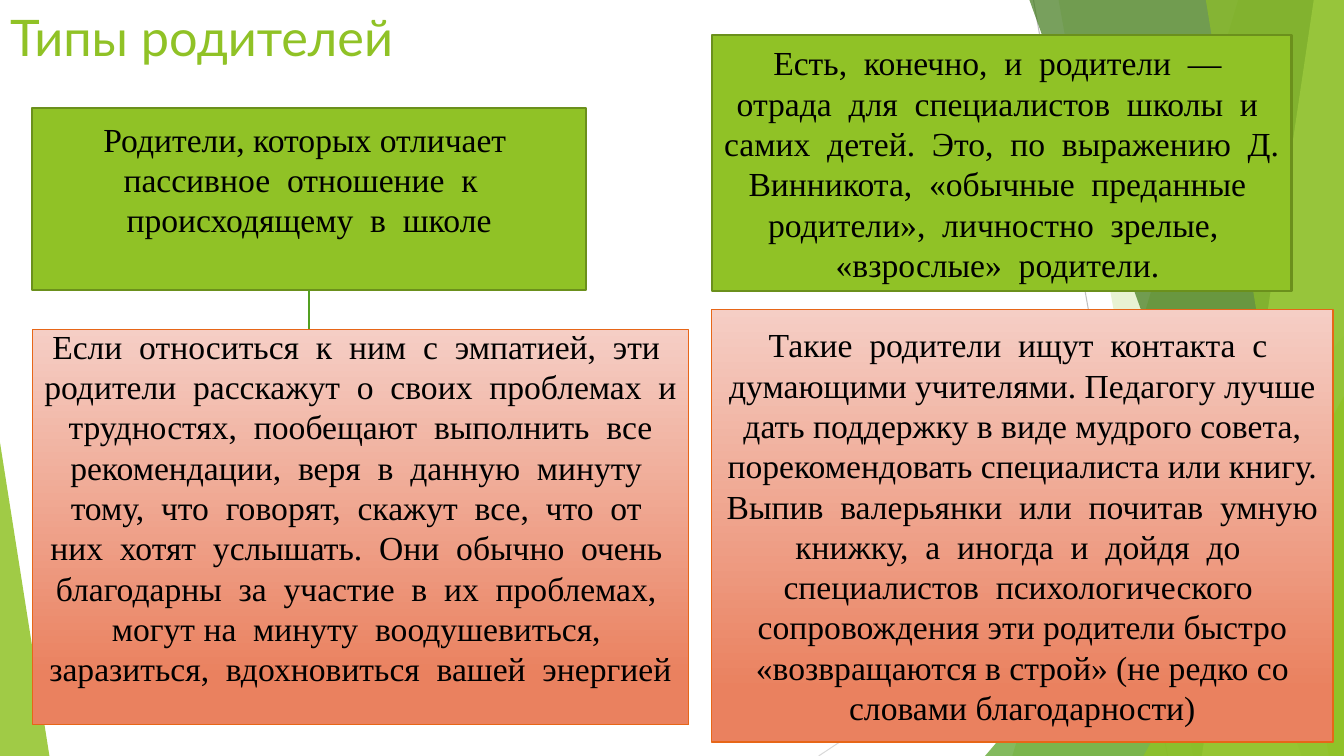
"""Builds the slide about types of parents: two headings above two advice panels."""
import pptx
import pptx.dml.color
import pptx.enum.shapes
import pptx.enum.text
import pptx.oxml
import pptx.oxml.ns
import pptx.util
from pptx.util import Inches

COLORS = {
    "green": "90C226", "green_edge": "6B901C", "leaf": "54A021", "forest": "3F7819",
    "lime": "C0E474", "gray": "BFBFBF", "light_gray": "D9D9D9", "black": "000000",
    "peach": "F5CEC5", "coral": "EA815F", "orange": "E76618",
}
WIDTH, HEIGHT = 13.33, 7.5


def rgb(name):
    return pptx.dml.color.RGBColor.from_string(COLORS[name])


def add_line(start, end, color, width):
    connector = slide.shapes.add_connector(
        pptx.enum.shapes.MSO_CONNECTOR.STRAIGHT, *[Inches(value) for value in start + end])
    connector.line.color.rgb = rgb(color)
    connector.line.width = pptx.util.Pt(width)
    pptx.oxml.ns.qn("a:effectLst")
    connector._element.spPr.append(pptx.oxml.parse_xml(
        f"<a:effectLst {pptx.oxml.ns.nsdecls('a')}/>"))
    return connector


presentation = pptx.Presentation()
presentation.slide_width = Inches(WIDTH)
presentation.slide_height = Inches(HEIGHT)
slide = presentation.slides.add_slide(presentation.slide_layouts[5])

add_line((10.25, 0), (11.58, HEIGHT), "gray", 0.75)
add_line((WIDTH, 4.03), (8.12, HEIGHT), "light_gray", 0.75)

# kind, geometry, colour, opacity
decorations = [
    ("band", (12.28, 10.04), "green", 30),
    ("band", (10.5, 11.83), "green", 20),
    ("triangle", (9.77, 3.33, 3.56, 1), "leaf", 72),
    ("band", (10.21, 12.91), "forest", 70),
    ("band", (13.03, 11.92), "lime", 70),
    ("band", (11.96, 13.18), "green", 65),
    ("triangle", (11.34, 3.93, 1.99, 1), "green", 80),
    ("triangle", (0, 4.39, 0.49, 0), "green", 85),
]
for kind, geometry, color, opacity in decorations:
    if kind == "band":
        top_x, bottom_x = geometry
        builder = slide.shapes.build_freeform(Inches(top_x), 0)
        builder.add_line_segments([(Inches(x), Inches(y)) for x, y in (
            (WIDTH, 0), (WIDTH, HEIGHT), (bottom_x, HEIGHT))], close=True)
        shape = builder.convert_to_shape()
    else:
        left, top, width, apex = geometry
        shape = slide.shapes.add_shape(
            pptx.enum.shapes.MSO_SHAPE.ISOSCELES_TRIANGLE,
            Inches(left), Inches(top), Inches(width), Inches(HEIGHT - top))
        shape.adjustments[0] = apex
    shape.shadow.inherit = False
    shape.line.fill.background()
    shape.fill.solid()
    shape.fill.fore_color.rgb = rgb(color)
    color_element = shape._element.spPr.find(".//" + pptx.oxml.ns.qn("a:srgbClr"))
    color_element.append(pptx.oxml.parse_xml(
        f"<a:alpha {pptx.oxml.ns.nsdecls('a')} val='{opacity * 1000}'/>"))

title = slide.shapes.title
title.left, title.top, title.width, title.height = 0, 0, Inches(4.29), Inches(0.72)
title.text_frame.vertical_anchor = pptx.enum.text.MSO_ANCHOR.MIDDLE
paragraph = title.text_frame.paragraphs[0]
paragraph.alignment = pptx.enum.text.PP_ALIGN.LEFT
run = paragraph.add_run()
run.text = "Типы родителей"
run.font.name = "Lato"
run.font.size = pptx.util.Pt(36)
run.font.color.rgb = rgb("green")

# style, left, top, width, height, bottom margin, paragraphs
boxes = [
    ("heading", 0.32, 1.07, 5.49, 1.81, 0.45, [
        "Родители, которых отличает  пассивное  отношение  к  ",
        "происходящему  в  школе"]),
    ("heading", 7.06, 0.35, 5.75, 2.54, 0.05, [
        "Есть,  конечно,  и  родители  —  отрада  для  специалистов  школы  и  самих  детей.  "
        "Это,  по  выражению  Д.  Винникота,  «обычные  преданные  ",
        "родители»,  личностно  зрелые,  ",
        "«взрослые»  родители. "]),
    ("advice", 0.32, 3.27, 6.51, 3.92, 0.45, [
        "Если  относиться  к  ним  с  эмпатией,  эти  родители  расскажут  о  своих  проблемах  "
        "и  трудностях,  пообещают  выполнить  все  рекомендации,  веря  в  данную  минуту  "
        "тому,  что  говорят,  скажут  все,  что  от  них  хотят  услышать.  Они  обычно  очень  "
        "благодарны  за  участие  в  их  проблемах,  могут на  минуту  воодушевиться,  "
        "заразиться,  вдохновиться  вашей  энергией"]),
    ("advice", 7.06, 3.07, 6.16, 4.29, 0.05, [
        "Такие  родители  ищут  контакта  с  думающими учителями. Педагогу лучше дать поддержку "
        "в виде мудрого совета, порекомендовать специалиста или книгу. Выпив  валерьянки  или  "
        "почитав  умную книжку,  а  иногда  и  дойдя  до  специалистов  психологического  "
        "сопровождения эти родители быстро «возвращаются в строй» (не редко со словами "
        "благодарности)"]),
]
for index, (style, left, top, width, height, bottom_margin, texts) in enumerate(boxes):
    box = slide.shapes.add_shape(
        pptx.enum.shapes.MSO_SHAPE.RECTANGLE,
        Inches(left), Inches(top), Inches(width), Inches(height))
    box.shadow.inherit = False
    if style == "heading":
        box.fill.solid()
        box.fill.fore_color.rgb = rgb("green")
        box.line.color.rgb = rgb("green_edge")
        box.line.width = pptx.util.Pt(1.5)
    else:
        box.fill.gradient()
        box.fill.gradient_angle = 270
        for stop, color, position in zip(
                box.fill.gradient_stops, ("peach", "coral"), (0, 0.88)):
            stop.color.rgb = rgb(color)
            stop.position = position
        box.line.color.rgb = rgb("orange")
        box.line.width = pptx.util.Pt(1)
    frame = box.text_frame
    frame.word_wrap = True
    frame.vertical_anchor = pptx.enum.text.MSO_ANCHOR.MIDDLE
    frame.margin_bottom = Inches(bottom_margin)
    for number, text in enumerate(texts):
        paragraph = frame.add_paragraph() if number else frame.paragraphs[0]
        paragraph.alignment = pptx.enum.text.PP_ALIGN.CENTER
        paragraph.line_spacing = pptx.util.Pt(28.8)
        run = paragraph.add_run()
        run.text = text
        run.font.name = "Times New Roman"
        run.font.size = pptx.util.Pt(24)
        run.font.color.rgb = rgb("black")
    if index == 0:
        center = left + width / 2
        arrow = add_line((center, top + height), (center, 3.42), "leaf", 1.5)
        arrow.begin_connect(box, 2)
        arrow.line._get_or_add_ln().append(pptx.oxml.parse_xml(
            f"<a:tailEnd {pptx.oxml.ns.nsdecls('a')} type='triangle'/>"))

presentation.save("out.pptx")
